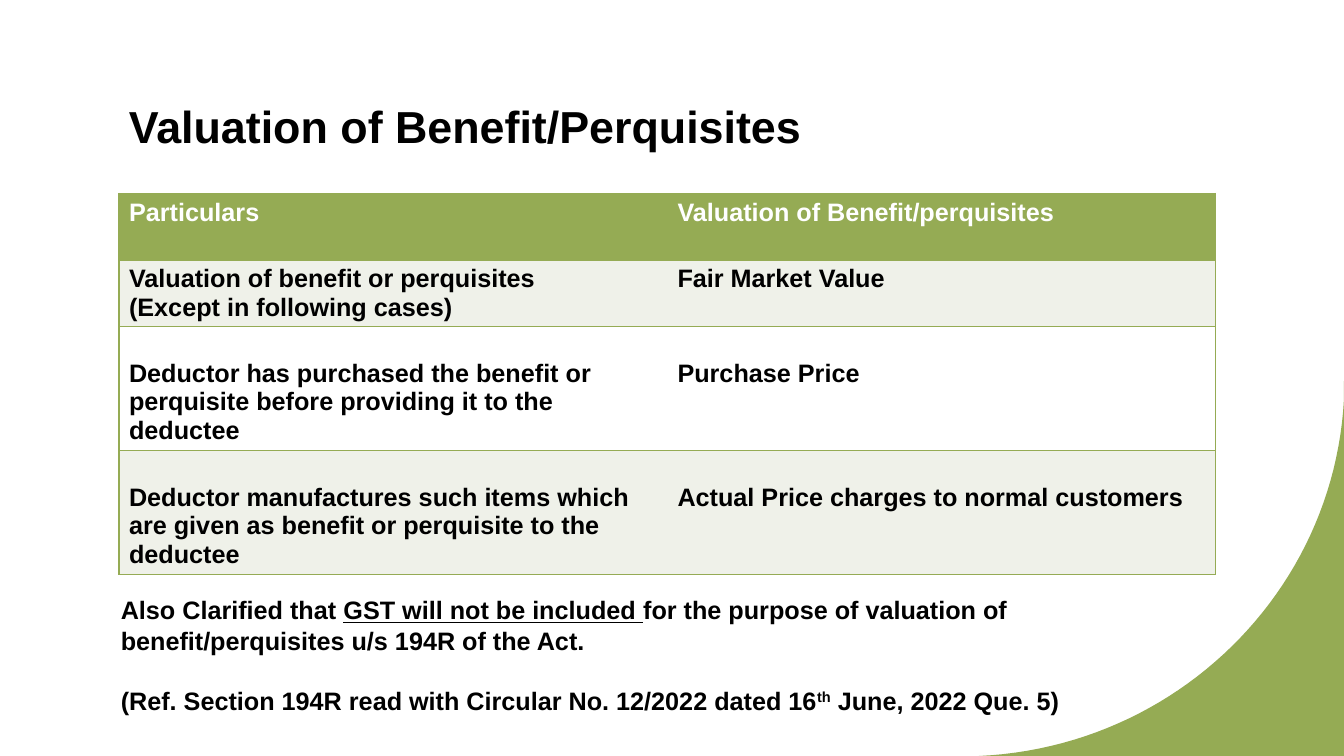
from pptx import Presentation
from pptx.dml.color import RGBColor
from pptx.enum.text import MSO_ANCHOR as Anchor
from pptx.oxml import parse_xml
from pptx.oxml.ns import nsdecls
from pptx.util import Inches, Pt

GREEN = RGBColor(0x95, 0xAB, 0x54)
PALE = RGBColor(0xEF, 0xF1, 0xE9)
WHITE = RGBColor(0xFF, 0xFF, 0xFF)
BLACK = RGBColor(0x00, 0x00, 0x00)

ROWS = [
    ("Particulars", "Valuation of Benefit/perquisites"),
    ("Valuation of benefit or perquisites\n(Except in following cases)",
     "Fair Market Value"),
    ("Deductor has purchased the benefit or perquisite before providing it "
     "to the deductee", "Purchase Price"),
    ("Deductor manufactures such items which are given as benefit or "
     "perquisite to the deductee", "Actual Price charges to normal customers"),
]
HEIGHTS = [0.66, 0.66, 1.22, 1.22]
FILLS = [GREEN, PALE, WHITE, PALE]
TOPS = [0.05, 0.05, 0.33, 0.33]

NOTES = [
    [("Also Clarified that ", ""), ("GST will not be included ", "under"),
     ("for the purpose of valuation of benefit/perquisites u/s 194R of the Act.", "")],
    [("(Ref. Section 194R read with Circular No. 12/2022 dated 16", ""),
     ("th", "super"), (" June, 2022 Que. 5)", "")],
]


def curve(ends, steps=48):
    """Return points along a cubic Bezier curve given its four control points."""
    points = []
    for i in range(steps + 1):
        t = i / steps
        parts = ((1 - t) ** 3, 3 * t * (1 - t) ** 2, 3 * t * t * (1 - t), t ** 3)
        points.append(tuple(sum(k * p[axis] for k, p in zip(parts, ends))
                            for axis in (0, 1)))
    return points


class Deck:
    font = "Arial"

    def __init__(self):
        self.prs = Presentation()
        self.prs.slide_width = Inches(13.33)
        self.prs.slide_height = Inches(7.5)
        self.slide = self.prs.slides.add_slide(self.prs.slide_layouts[6])

    def style(self, para, size, color):
        font = para.font
        font.name, font.size, font.bold = self.font, Pt(size), True
        font.color.rgb = color

    def corner(self, points, color):
        spots = [(Inches(x), Inches(y)) for x, y in points]
        pen = self.slide.shapes.build_freeform(*spots[0])
        pen.add_line_segments(spots[1:], close=True)
        shape = pen.convert_to_shape()
        shape.shadow.inherit = False
        shape.fill.solid()
        shape.fill.fore_color.rgb = color
        shape.line.fill.background()

    def box(self, left, top, width, height):
        shape = self.slide.shapes.add_textbox(*map(Inches, (left, top, width, height)))
        shape.text_frame.word_wrap = True
        return shape.text_frame

    def title(self, text, *place):
        frame = self.box(*place)
        frame.vertical_anchor = Anchor.BOTTOM
        para = frame.paragraphs[0]
        para.text = text
        para.line_spacing = 1.1
        self.style(para, 32, BLACK)

    def border(self, cell, sides):
        """Draw the named sides in green and hide the others."""
        for side in "LRTB":
            ink = (f'<a:solidFill><a:srgbClr val="{GREEN}"/></a:solidFill>'
                   if side in sides else "<a:noFill/>")
            cell._tc.get_or_add_tcPr().append(parse_xml(
                f'<a:ln{side} {nsdecls("a")} w="12700">{ink}</a:ln{side}>'))

    def table(self, left, top, width):
        grid = self.slide.shapes.add_table(
            len(ROWS), 2, *map(Inches, (left, top, width, sum(HEIGHTS)))).table
        for r, texts in enumerate(ROWS):
            grid.rows[r].height = Inches(HEIGHTS[r])
            for c, text in enumerate(texts):
                cell = grid.cell(r, c)
                cell.text = text
                cell.margin_top = Inches(TOPS[r])
                cell.margin_bottom = Inches(0)
                self.border(cell, "TB" + "LR"[c])
                cell.fill.solid()
                cell.fill.fore_color.rgb = FILLS[r]
                for para in cell.text_frame.paragraphs:
                    self.style(para, 18, BLACK if r else WHITE)

    def notes(self, paras, *place):
        frame = self.box(*place)
        for i, runs in enumerate(paras):
            para = frame.add_paragraph() if i else frame.paragraphs[0]
            para._p.get_or_add_pPr().set("marL", str(Inches(0.5)))
            para.space_before = Pt(21.5 if i else 0)
            self.style(para, 18, BLACK)
            for text, mark in runs:
                run = para.add_run()
                run.text = text
                if mark == "under":
                    run.font.underline = True
                elif mark == "super":
                    run.font._element.set("baseline", "30000")


def main():
    deck = Deck()
    arc = curve([(9.71, 7.5), (11.67, 7.41), (13.23, 5.87), (13.33, 3.96)])
    deck.corner([(13.33, 3.78), (13.33, 7.5), (9.63, 7.5)] + arc, GREEN)
    deck.title("Valuation of Benefit/Perquisites", 1.18, 0.52, 10.88, 1.04)
    deck.table(1.18, 1.92, 10.88)
    deck.notes(NOTES, 0.6, 5.85, 10.63, 1.31)
    deck.prs.save("out.pptx")


if __name__ == "__main__":
    main()
